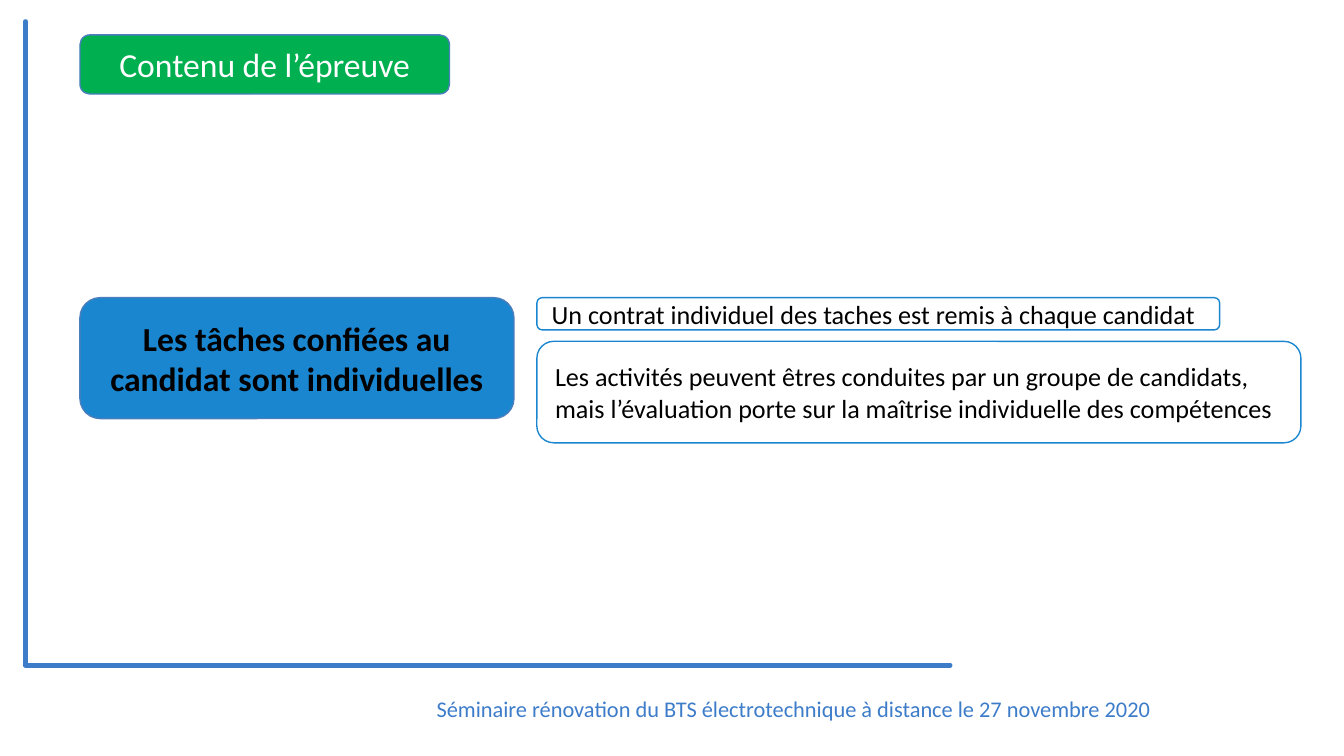
from lxml import etree
from pptx import Presentation
from pptx.dml.color import RGBColor
from pptx.enum.shapes import MSO_CONNECTOR, MSO_SHAPE
from pptx.enum.text import MSO_ANCHOR, PP_ALIGN
from pptx.oxml.ns import qn
from pptx.util import Pt

EMU_PER_PX = 4572
FONT_NAME = "Calibri"
STRAIGHT = MSO_CONNECTOR.STRAIGHT
ROUNDED = MSO_SHAPE.ROUNDED_RECTANGLE
MIDDLE = MSO_ANCHOR.MIDDLE
LEFT, CENTER = PP_ALIGN.LEFT, PP_ALIGN.CENTER

COLORS = {
    "frame": "3D7CC9",
    "outline": "4B7EBC",
    "blue": "1A86D0",
    "green": "00B050",
    "white": "FFFFFF",
    "black": "000000",
}

HEADING = {"size": Pt(18), "bold": False}
TOPIC = {"size": Pt(18), "bold": True}
DETAIL = {"size": Pt(14), "bold": False}
FOOTER = {"size": Pt(12), "bold": False}

FRAME_LINES = [(38, 990, 1414, 990), (38, 990, 38, 32)]

BOXES = [
    ((119, 443, 646, 180), "blue", "outline", "black", TOPIC, CENTER,
     "Les tâches confiées au candidat sont individuelles"),
    ((799, 443, 1016, 48), "white", "blue", "black", DETAIL, LEFT,
     "Un contrat individuel des taches est remis à chaque candidat"),
    ((799, 508, 1137, 151), "white", "blue", "black", DETAIL, LEFT,
     "Les activités peuvent êtres conduites par un groupe de candidats, "
     "mais l’évaluation porte sur la maîtrise individuelle des compétences"),
    ((119, 52, 550, 88), "green", "outline", "white", HEADING, CENTER,
     "Contenu de l’épreuve"),
]


def px(*lengths):
    """Turn px lengths into EMU."""
    return [length * EMU_PER_PX for length in lengths]


def color(name):
    """Look up a named colour."""
    return RGBColor.from_string(COLORS[name])


def write_text(shape, text, text_color, font_format, alignment):
    """Fill a shape with one formatted paragraph."""
    shape.text_frame.word_wrap = True
    paragraph = shape.text_frame.paragraphs[0]
    paragraph.alignment = alignment
    run = paragraph.add_run()
    run.text = text
    run.font.name = FONT_NAME
    run.font.color.rgb = color(text_color)
    for attribute, value in font_format.items():
        setattr(run.font, attribute, value)


def add_frame_line(slide, ends):
    """Draw one round-capped line of the page frame."""
    connector = slide.shapes.add_connector(STRAIGHT, *px(*ends))
    connector.line.color.rgb = color("frame")
    connector.line.width = Pt(2.5)
    properties = connector._element.spPr
    properties.find(qn("a:ln")).set("cap", "rnd")
    etree.SubElement(properties, qn("a:effectLst"))


def add_box(slide, bounds, fill, outline, text_color, font_format, alignment, text):
    """Draw a rounded box with vertically centred text."""
    shape = slide.shapes.add_shape(ROUNDED, *px(*bounds))
    shape.shadow.inherit = False
    shape.fill.solid()
    shape.fill.fore_color.rgb = color(fill)
    shape.line.color.rgb = color(outline)
    shape.line.width = Pt(0.75)
    shape.text_frame.vertical_anchor = MIDDLE
    write_text(shape, text, text_color, font_format, alignment)


def add_footer(slide, bounds, text):
    """Place the footer text."""
    text_box = slide.shapes.add_textbox(*px(*bounds))
    write_text(text_box, text, "frame", FOOTER, LEFT)


def main():
    """Build and save the slide."""
    presentation = Presentation()
    presentation.slide_width, presentation.slide_height = px(2000, 1125)
    slide = presentation.slides.add_slide(presentation.slide_layouts[6])
    for ends in FRAME_LINES:
        add_frame_line(slide, ends)
    add_footer(slide, (630, 1025, 1132, 60),
               "Séminaire rénovation du BTS électrotechnique à distance "
               "le 27 novembre 2020")
    for box in BOXES:
        add_box(slide, *box)
    presentation.save("out.pptx")


if __name__ == "__main__":
    main()
